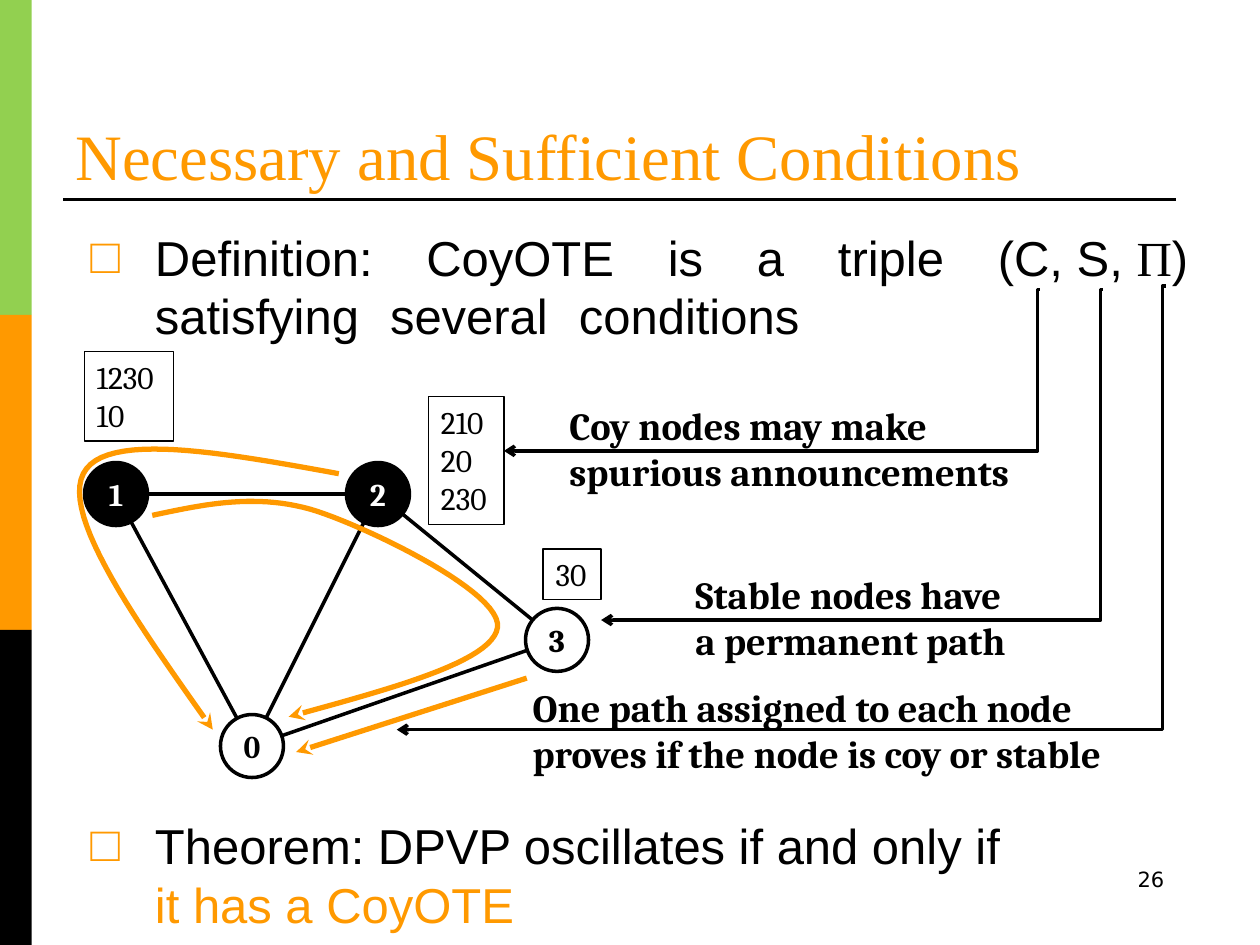
from lxml import etree
from pptx import Presentation
from pptx import util as u
from pptx.dml.color import RGBColor
from pptx.enum import shapes, text
from pptx.oxml import ns

BLACK = RGBColor(0x00, 0x00, 0x00)
WHITE = RGBColor(0xFF, 0xFF, 0xFF)
ORANGE = RGBColor(0xFF, 0x99, 0x00)
GREEN = RGBColor(0x92, 0xD0, 0x50)

NODE_SIZE = 1.27
NODES = {
    "0": (3.58, 8.04, WHITE, BLACK),
    "1": (0.84, 2.96, BLACK, WHITE),
    "2": (6.12, 2.96, BLACK, WHITE),
    "3": (9.73, 5.9, WHITE, BLACK),
}
LINKS = ["21", "10", "20", "32", "30"]
PREFERENCES = [
    (0.2, 0.09, 1.8, 1.8, ["1230", "10"]),
    (9.45, 4.07, 1.17, 1.02, ["30"]),
    (7.14, 1, 1.52, 2.57, ["210", "20", "230"]),
]
ROUTES = [
    [(5.33, 2.55), (2.97, 2.12), (0.61, 1.69), (0.18, 2.55),
     (-0.26, 3.41), (1.27, 5.57), (2.79, 7.71)],
    [(1.57, 3.39), (2.64, 3.16), (3.73, 2.93), (4.9, 3.31), (6.04, 3.69),
     (8.63, 4.96), (8.53, 5.65), (8.43, 6.34), (6.37, 6.89), (4.32, 7.45)],
]
NOTES = [
    ("Coy nodes may make spurious announcements",
     (3.23, 2.18, 9.73), (12.96, 0.04), (2.16, 3.29)),
    ("Stable nodes have a permanent path",
     (5.77, 5.58, 7.19), (14.23, 0.04), (4.12, 6.7)),
    ("One path assigned to each node proves if the node is coy or stable",
     (2.49, 7.87, 12.88), (15.5, -0.03), (0, 8.91)),
]


def write(paragraph, words, font="Cambria", size=18, color=BLACK, bold=False, spacing=0):
    run = paragraph.add_run()
    run.text = words
    run.font.name = font
    run.font.size = u.Pt(size)
    run.font.color.rgb = color
    run.font.bold = bold
    if spacing:
        run.font._element.set("spc", str(spacing * 100))


def place(part, left, top, width, height):
    part.left, part.top = u.Cm(left), u.Cm(top)
    part.width, part.height = u.Cm(width), u.Cm(height)


def stroke(part, color, width, head=None):
    part.line.color.rgb = color
    part.line.width = u.Pt(width)
    if head:
        ln = part.line._get_or_add_ln()
        etree.SubElement(ln, ns.qn("a:tailEnd"), type=head)


def connect(slide, start, end, color=BLACK, width=2, head=None, elbow=None):
    kind = shapes.MSO_CONNECTOR.STRAIGHT if elbow is None else shapes.MSO_CONNECTOR.ELBOW
    line = slide.shapes.add_connector(kind, *map(u.Cm, (*start, *end)))
    stroke(line, color, width, head)
    properties = line._element.spPr
    etree.SubElement(properties, ns.qn("a:effectLst"))
    if elbow is not None:
        guides = properties.find(".//" + ns.qn("a:avLst"))
        etree.SubElement(guides, ns.qn("a:gd"), name="adj1", fmla=f"val {elbow}")


def add_outline(slide, kind, left, top, width, height, fill=None, line=0):
    part = slide.shapes.add_shape(kind, *map(u.Cm, (left, top, width, height)))
    part.shadow.inherit = False
    if fill is None:
        part.fill.background()
    else:
        part.fill.solid()
        part.fill.fore_color.rgb = fill
    if line:
        stroke(part, BLACK, line)
    else:
        part.line.fill.background()
    return part


def add_sidebar(slide, left, top, width, height):
    band = height / 3
    for row, color in enumerate((GREEN, ORANGE, BLACK)):
        add_outline(slide, shapes.MSO_SHAPE.RECTANGLE, left, top + row * band, width, band, color)


def add_heading(slide, left, top, width, height):
    heading = slide.shapes.title
    place(heading, left, top, width, height)
    heading.text_frame.vertical_anchor = text.MSO_ANCHOR.BOTTOM
    heading.text_frame.auto_size = text.MSO_AUTO_SIZE.NONE
    line = heading.text_frame.paragraphs[0]
    line.alignment = text.PP_ALIGN.LEFT
    write(line, "Necessary and Sufficient Conditions", font="Times New Roman", size=37, color=ORANGE)
    rule = top + height
    connect(slide, (left, rule), (left + 22.43, rule), width=1.5)


def add_statement(holder, box, pieces):
    place(holder, *box)
    holder.text_frame.auto_size = text.MSO_AUTO_SIZE.NONE
    statement = holder.text_frame.paragraphs[0]
    statement.space_before = u.Pt(5.6)
    properties = statement._p.get_or_add_pPr()
    properties.set("marL", str(u.Cm(1.3)))
    properties.set("indent", str(u.Cm(-1.3)))
    tint = etree.SubElement(properties, ns.qn("a:buClr"))
    etree.SubElement(tint, ns.qn("a:srgbClr"), val=str(ORANGE))
    etree.SubElement(properties, ns.qn("a:buChar"), char="□")
    for words, look in pieces:
        write(statement, words, **{"font": "Arial", "size": 28, **look})


def definition_pieces():
    pieces = []
    for word in ("Definition:", "CoyOTE", "is", "a", "triple"):
        pieces += [(word, {}), (" ", {"spacing": 23})]
    pieces += [("(C, S, ", {}), ("Π", {"font": "Times New Roman"}), (") satisfying", {})]
    for word in ("several", "conditions"):
        pieces += [(" ", {"spacing": 10}), (word, {})]
    return pieces


def add_notes(slide, left, top):
    for words, (x, y, width), start, end in NOTES:
        note = slide.shapes.add_textbox(*map(u.Cm, (left + x, top + y, width, 2.13)))
        note.text_frame.word_wrap = True
        write(note.text_frame.paragraphs[0], words, size=22, bold=True)
        connect(slide, (left + start[0], top + start[1]), (left + end[0], top + end[1]),
                head="arrow", elbow=400)


def bezier(points, steps=24):
    curve = [points[0]]
    for first in range(0, len(points) - 1, 3):
        a, b, c, d = points[first:first + 4]
        for step in range(1, steps + 1):
            t = step / steps
            s = 1 - t
            curve.append(tuple(s**3 * a[i] + 3 * s * s * t * b[i] + 3 * s * t * t * c[i] + t**3 * d[i]
                               for i in (0, 1)))
    return curve


def add_network(slide, left, top):
    def at(x, y):
        return left + x, top + y

    for start, end in LINKS:
        connect(slide, at(*NODES[start][:2]), at(*NODES[end][:2]))
    for label, (x, y, fill, ink) in NODES.items():
        corner = at(x - NODE_SIZE / 2, y - NODE_SIZE / 2)
        node = add_outline(slide, shapes.MSO_SHAPE.OVAL, *corner, NODE_SIZE, NODE_SIZE, fill, 2)
        frame = node.text_frame
        frame.word_wrap = False
        frame.margin_left = frame.margin_right = frame.margin_top = frame.margin_bottom = 0
        frame.paragraphs[0].alignment = text.PP_ALIGN.CENTER
        write(frame.paragraphs[0], label, color=ink, bold=True)
    for x, y, width, height, paths in PREFERENCES:
        ranking = add_outline(slide, shapes.MSO_SHAPE.RECTANGLE, *at(x, y), width, height, line=0.75)
        frame = ranking.text_frame
        frame.word_wrap = False
        frame.vertical_anchor = text.MSO_ANCHOR.TOP
        for row, digits in enumerate(paths):
            entry = frame.add_paragraph() if row else frame.paragraphs[0]
            entry.alignment = text.PP_ALIGN.LEFT
            write(entry, digits)
    connect(slide, at(9.12, 6.67), at(4.47, 8.16), ORANGE, 3, "stealth")
    for points in ROUTES:
        track = [tuple(map(u.Cm, at(*point))) for point in bezier(points)]
        builder = slide.shapes.build_freeform(*track[0])
        builder.add_line_segments(track[1:], close=False)
        route = builder.convert_to_shape()
        route.shadow.inherit = False
        route.fill.background()
        stroke(route, ORANGE, 3, "stealth")


def add_page_number(slide, left, top, width, height):
    page = slide.shapes.add_textbox(*map(u.Cm, (left, top, width, height)))
    page.text_frame.word_wrap = True
    page.text_frame.paragraphs[0].alignment = text.PP_ALIGN.RIGHT
    write(page.text_frame.paragraphs[0], "26", font="DejaVu Sans", size=12)


def main():
    deck = Presentation()
    deck.slide_width, deck.slide_height = u.Cm(25.4), u.Cm(19.05)
    slide = deck.slides.add_slide(deck.slide_layouts[3])
    add_sidebar(slide, 0, 0, 0.64, 19.05)
    add_heading(slide, 1.27, 0.64, 22.23, 3.38)
    definition, theorem = slide.placeholders[1], slide.placeholders[2]
    add_statement(definition, (1.57, 4.45, 23.19, 2.64), definition_pieces())
    add_statement(theorem, (1.57, 16.31, 19.18, 2.74), [
        ("Theorem: DPVP oscillates if and only if ", {}),
        ("it has a CoyOTE", {"color": ORANGE}),
    ])
    add_notes(slide, 8, 5.8)
    add_network(slide, 1.5, 7)
    add_page_number(slide, 18.21, 17.35, 5.51, 1.32)
    deck.save("out.pptx")


if __name__ == "__main__":
    main()
